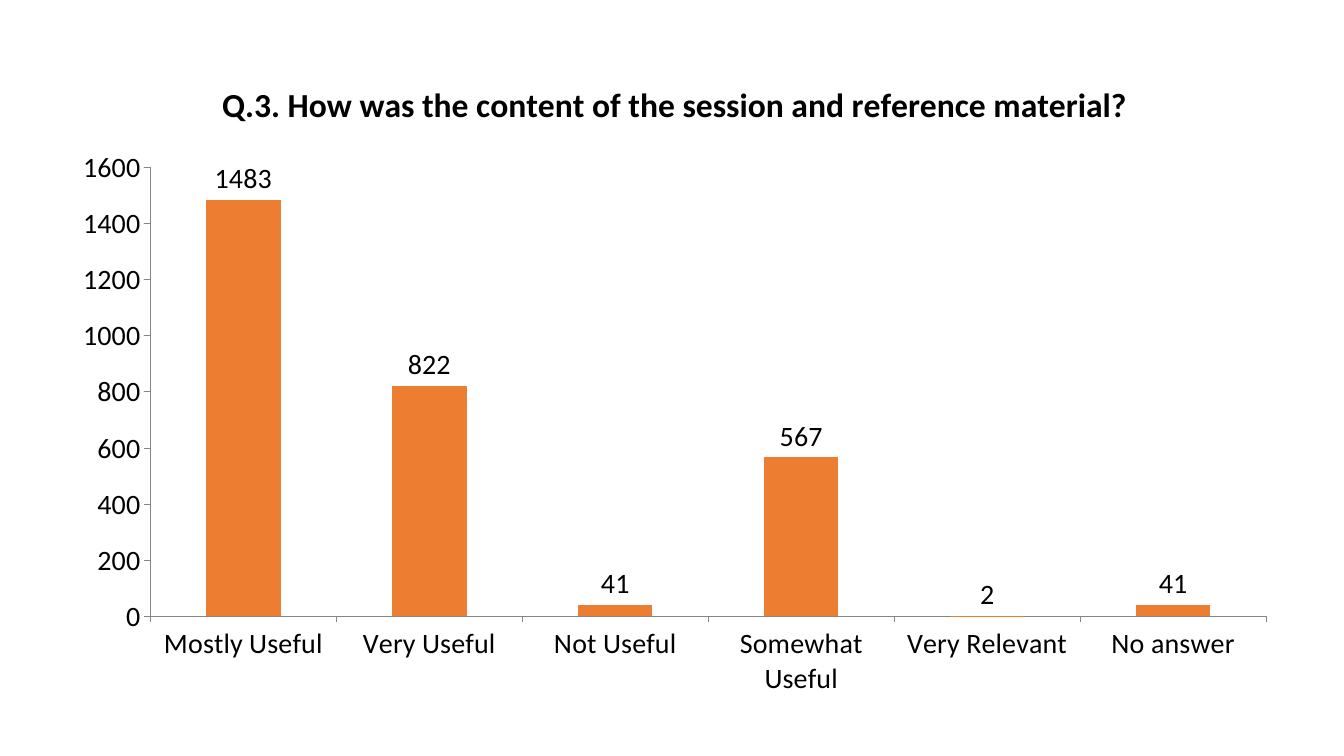
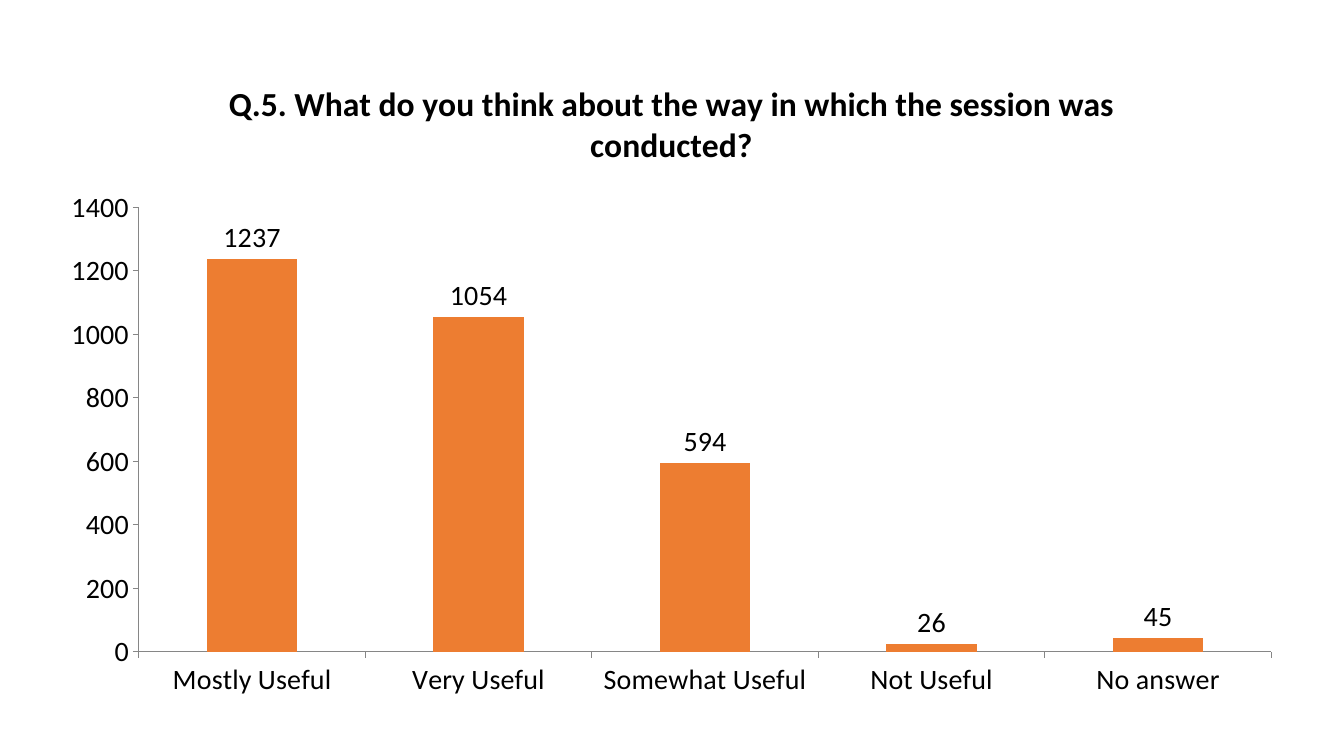
from pptx import Presentation
from pptx.chart.data import CategoryChartData
from pptx.dml.color import RGBColor
from pptx.enum.chart import XL_CHART_TYPE, XL_LABEL_POSITION, XL_TICK_MARK
from pptx.util import Cm, Pt

ORANGE = RGBColor(0xED, 0x7D, 0x31)
BLACK = RGBColor(0x00, 0x00, 0x00)
GRAY = RGBColor(0x86, 0x86, 0x86)
FONT = "Calibri"

# Each question: title, chart frame in cm, answers with their counts
QUESTIONS = [
    (
        "Q.3. How was the content of the session and reference material?",
        (1.47, 1.45, 31.06, 16.41),
        {
            "Mostly Useful": 1483,
            "Very Useful": 822,
            "Not Useful": 41,
            "Somewhat Useful": 567,
            "Very Relevant": 2,
            "No answer": 41,
        },
    ),
    (
        "Q.5. What do you think about the way in which the session was conducted?",
        (1.17, 1.42, 31.5, 16.46),
        {
            "Mostly Useful": 1237,
            "Very Useful": 1054,
            "Somewhat Useful": 594,
            "Not Useful": 26,
            "No answer": 45,
        },
    ),
]


def style_font(font, size, bold=False):
    font.name = FONT
    font.size = Pt(size)
    font.bold = bold
    font.color.rgb = BLACK


presentation = Presentation()
presentation.slide_width = Cm(33.87)
presentation.slide_height = Cm(19.05)
blank_layout = presentation.slide_layouts[6]

for question, frame, answers in QUESTIONS:
    slide = presentation.slides.add_slide(blank_layout)

    # Chart with one series
    chart_data = CategoryChartData()
    chart_data.categories = list(answers)
    chart_data.add_series(question, list(answers.values()))
    chart = slide.shapes.add_chart(
        XL_CHART_TYPE.COLUMN_CLUSTERED, *[Cm(length) for length in frame], chart_data
    ).chart
    style_font(chart.font, 20)
    chart.has_legend = False

    # Title
    chart.has_title = True
    chart.chart_title.include_in_layout = False
    title = chart.chart_title.text_frame.paragraphs[0]
    title.text = question
    style_font(title.font, 24, bold=True)

    # Columns and their labels
    plot = chart.plots[0]
    plot.gap_width = 150
    plot.vary_by_categories = False
    column_fill = plot.series[0].format.fill
    column_fill.solid()
    column_fill.fore_color.rgb = ORANGE
    plot.has_data_labels = True
    labels = plot.data_labels
    labels.show_value = True
    labels.position = XL_LABEL_POSITION.OUTSIDE_END
    style_font(labels.font, 20)

    # Axes
    for axis in (chart.category_axis, chart.value_axis):
        axis.has_major_gridlines = False
        axis.major_tick_mark = XL_TICK_MARK.OUTSIDE
        axis.minor_tick_mark = XL_TICK_MARK.NONE
        axis.format.line.color.rgb = GRAY
        axis.format.line.width = Pt(0.75)
        style_font(axis.tick_labels.font, 20)

presentation.save("out.pptx")
